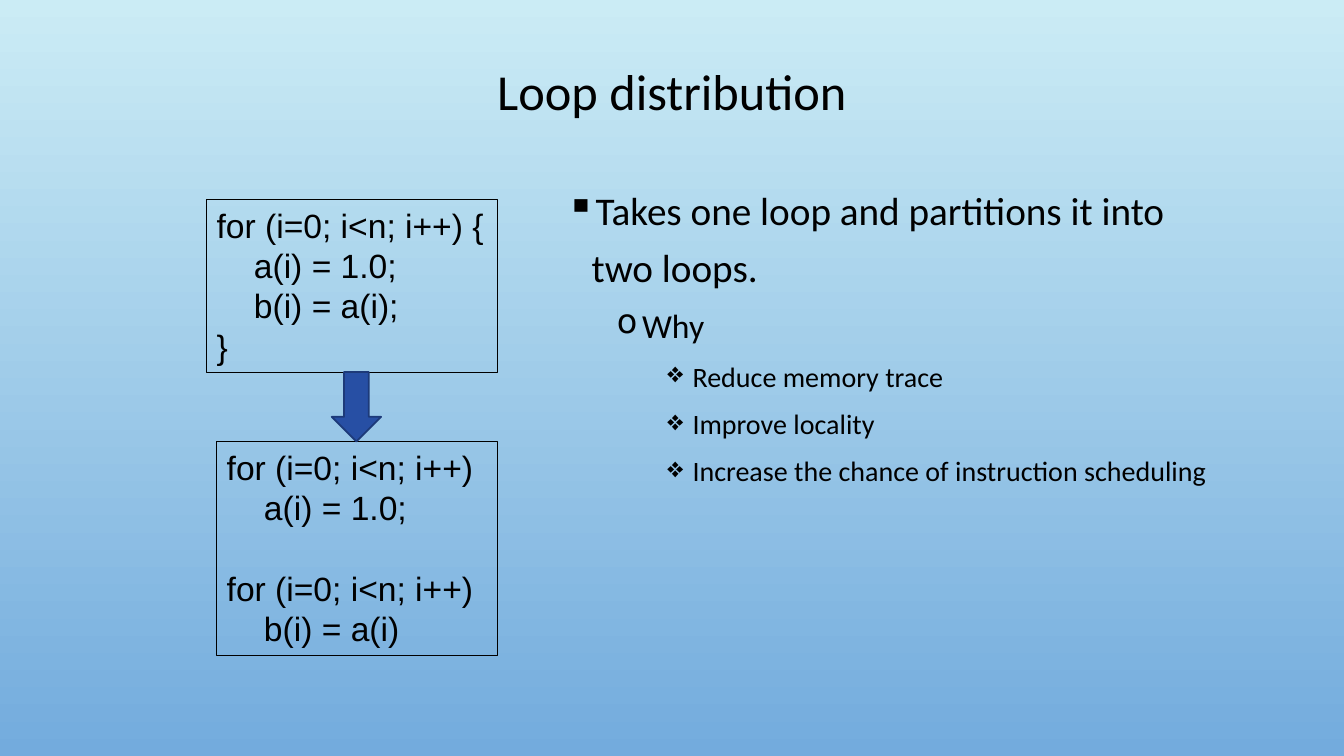
from dataclasses import dataclass

from lxml.etree import SubElement
from pptx import Presentation
from pptx.dml.color import RGBColor
from pptx.enum.shapes import MSO_SHAPE as Shape
from pptx.enum.text import MSO_ANCHOR as Anchor, MSO_AUTO_SIZE as Fit, PP_ALIGN as Align
from pptx.oxml.ns import qn
from pptx.util import Inches, Pt

BLACK = RGBColor(0x00, 0x00, 0x00)
SKY = RGBColor(0xCB, 0xEC, 0xF5)
SEA = RGBColor(0x73, 0xAB, 0xDD)
BLUE = RGBColor(0x27, 0x4F, 0xA4)
NAVY = RGBColor(0x1D, 0x3A, 0x79)


@dataclass
class Box:
    left: float
    top: float
    width: float
    height: float

    def place(self) -> list:
        return [Inches(v) for v in (self.left, self.top, self.width, self.height)]


@dataclass
class Level:
    mark: str
    size: int
    before: int


@dataclass
class Point:
    level: int
    text: str


@dataclass
class Code:
    box: Box
    text: str


LEVELS = [Level("▪", 28, 10), Level("o", 24, 5), Level("❖", 20, 5)]

POINTS = [
    Point(0, "Takes one loop and partitions it into two loops."),
    Point(1, "Why"),
    Point(2, "Reduce memory trace"),
    Point(2, "Improve locality"),
    Point(2, "Increase the chance of instruction scheduling"),
]

CODES = [
    Code(Box(2.05, 1.98, 2.88, 1.72), """for (i=0; i<n; i++) {
    a(i) = 1.0;
    b(i) = a(i);
}"""),
    Code(Box(2.15, 4.38, 2.78, 2.12), """for (i=0; i<n; i++)
    a(i) = 1.0;

for (i=0; i<n; i++)
    b(i) = a(i)"""),
]


def style(para, name: str, size: int) -> None:
    para.font.name = name
    para.font.size = Pt(size)
    para.font.color.rgb = BLACK


def add_title(slide, box: Box, text: str) -> None:
    frame = slide.shapes.add_textbox(*box.place()).text_frame
    frame.word_wrap = True
    frame.vertical_anchor = Anchor.MIDDLE
    frame.text = text
    para = frame.paragraphs[0]
    para.alignment = Align.CENTER
    para.line_spacing = 0.9
    style(para, "Calibri", 36)


def add_points(slide, box: Box, points: list[Point]) -> None:
    frame = slide.shapes.add_textbox(*box.place()).text_frame
    frame.word_wrap = True
    frame.text = "\n".join(point.text for point in points)
    for i, (para, point) in enumerate(zip(frame.paragraphs, points)):
        level = LEVELS[point.level]
        para.level = point.level
        para.line_spacing = 1.2
        if i:
            para.space_before = Pt(level.before)
        # Hanging bullet
        props = para._p.get_or_add_pPr()
        props.set("marL", str(Inches(0.25 + 0.5 * point.level)))
        props.set("indent", str(Inches(-0.25)))
        SubElement(props, qn("a:buChar"), char=level.mark)
        style(para, "Calibri", level.size)


def add_code(slide, code: Code) -> None:
    shape = slide.shapes.add_textbox(*code.box.place())
    shape.line.color.rgb = BLACK
    shape.line.width = Pt(0.75)
    frame = shape.text_frame
    frame.word_wrap = False
    frame.auto_size = Fit.SHAPE_TO_FIT_TEXT
    frame.text = code.text
    for para in frame.paragraphs:
        style(para, "Arial", 24)


def add_arrow(slide, box: Box) -> None:
    arrow = slide.shapes.add_shape(Shape.DOWN_ARROW, *box.place())
    arrow.shadow.inherit = False
    arrow.fill.solid()
    arrow.fill.fore_color.rgb = BLUE
    arrow.line.color.rgb = NAVY
    arrow.line.width = Pt(1.25)


def main() -> None:
    deck = Presentation()
    deck.slide_width, deck.slide_height = Inches(13.33), Inches(7.5)
    slide = deck.slides.add_slide(deck.slide_layouts[6])

    # Background, light at the top
    fill = slide.background.fill
    fill.gradient()
    fill.gradient_angle = 270
    for stop, color in zip(fill.gradient_stops, (SKY, SEA)):
        stop.color.rgb = color

    # Title and points
    add_title(slide, Box(1, 0.32, 11.33, 1.23), "Loop distribution")
    add_points(slide, Box(5.52, 1.71, 6.82, 4.62), POINTS)

    # Loop before and after
    for code in CODES:
        add_code(slide, code)
    add_arrow(slide, Box(3.29, 3.69, 0.49, 0.69))

    deck.save("out.pptx")


if __name__ == "__main__":
    main()
